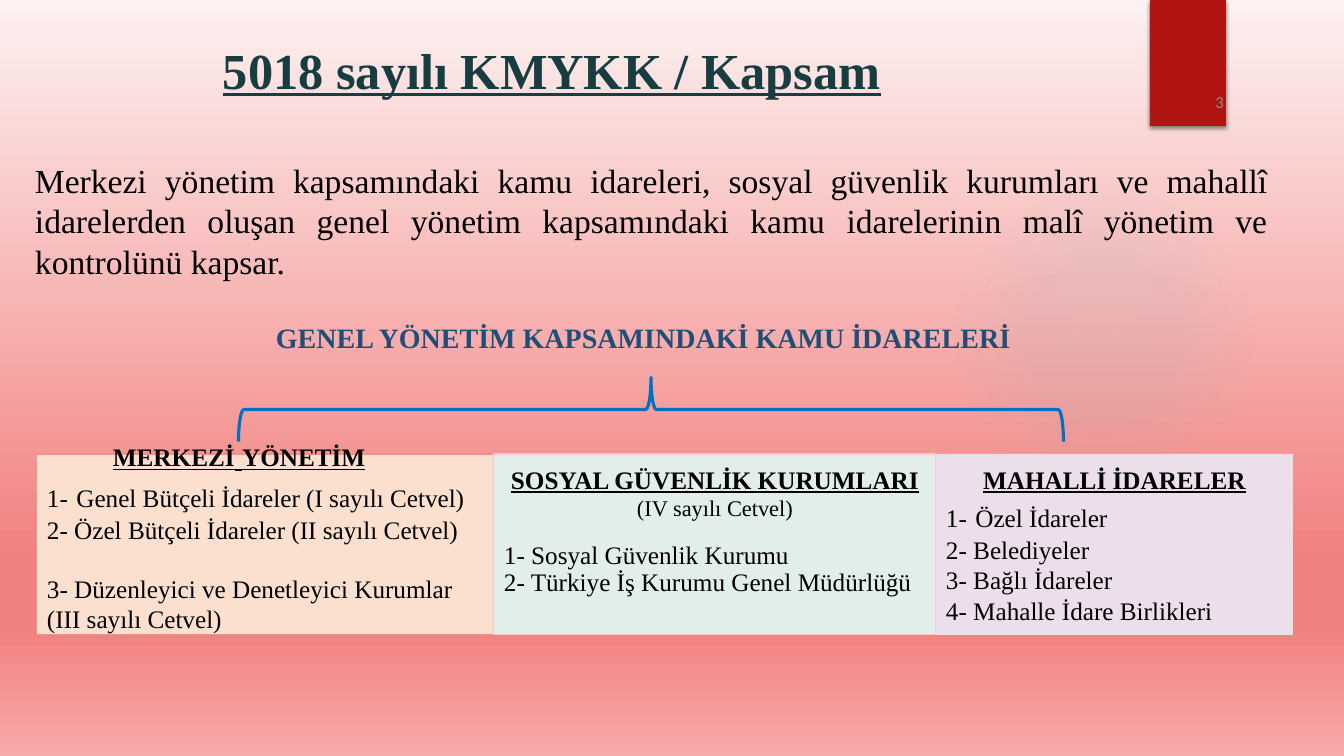
from lxml import etree
from pptx import Presentation
from pptx import util as u
from pptx.dml.color import RGBColor
from pptx.enum import shapes, text
from pptx.oxml import ns

BLACK = RGBColor(0, 0, 0)
TEAL = RGBColor(0x17, 0x3D, 0x40)
NAVY = RGBColor(0x1F, 0x4E, 0x79)
GREY = RGBColor(0x8C, 0x8C, 0x8C)
RED = RGBColor(0xB0, 0x15, 0x13)
BLUE = RGBColor(0x00, 0x70, 0xC0)
PEACH = RGBColor(0xFB, 0xE0, 0xCF)
PEACH_EDGE = RGBColor(0xF3, 0x8F, 0x8D)
MINT = RGBColor(0xE1, 0xEE, 0xE9)
MINT_EDGE = RGBColor(0xF9, 0xC7, 0xC6)
LILAC = RGBColor(0xEC, 0xDF, 0xEB)
BACKDROP = [(0, "FDF1F1", 100), (74, "F1817F", 100), (83, "F1817F", 100), (100, "F6ABAA", 100)]
GLOW = [(0, "50B9C1", 7), (36, "50B9C1", 6), (69, "50B9C1", 0)]

SERIF = "Times New Roman"
LEFT, CENTER = text.PP_ALIGN.LEFT, text.PP_ALIGN.CENTER
RIGHT, JUSTIFY = text.PP_ALIGN.RIGHT, text.PP_ALIGN.JUSTIFY
TOP, MIDDLE, BOTTOM = text.MSO_ANCHOR.TOP, text.MSO_ANCHOR.MIDDLE, text.MSO_ANCHOR.BOTTOM
HEAD = {"bold": True, "underline": True}
WIDE = {"size": 24}
TITLE = [([("5018 sayılı KMYKK / Kapsam", {"size": 36, "color": TEAL, **HEAD})], {})]
NUMBER = [([("3", {"size": 12, "name": "Calibri", "color": GREY})], {"alignment": RIGHT})]
SCOPE = [([("Merkezi yönetim kapsamındaki kamu idareleri, sosyal güvenlik kurumları ve mahallî "
            "idarelerden oluşan genel yönetim kapsamındaki kamu idarelerinin malî yönetim ve "
            "kontrolünü kapsar.", WIDE)], {"alignment": JUSTIFY})]
GROUPS = [([("GENEL YÖNETİM KAPSAMINDAKİ KAMU İDARELERİ",
             {"size": 20, "bold": True, "color": NAVY})], {})]
CENTRAL = [
    ([("\t", {}), ("MERKEZİ", HEAD), (" ", {"size": 24, "name": "Cambria", **HEAD}),
      ("YÖNETİM", HEAD), ("\t", {"size": 24, "name": "Cambria", **HEAD})], {"tabs": (66, 370)}),
    ([("1-", {}), (" ", WIDE), ("Genel Bütçeli İdareler (I sayılı Cetvel)", {})], {}),
    ([("2- Özel Bütçeli İdareler (II sayılı Cetvel)", {})], {}),
    ([("3- Düzenleyici ve Denetleyici Kurumlar (III sayılı Cetvel)", {})],
     {"space_before": u.Pt(21)}),
]
SOCIAL = [
    ([("SOSYAL GÜVENLİK KURUMLARI", HEAD)], {"alignment": CENTER}),
    ([("(IV sayılı Cetvel)", {"size": 16})], {"alignment": CENTER}),
    ([("1- Sosyal Güvenlik Kurumu", {})], {"space_before": u.Pt(13)}),
    ([("2- Türkiye İş Kurumu Genel Müdürlüğü", {})], {"line_spacing": 0.9}),
]
LOCAL = [
    ([("MAHALLİ İDARELER", HEAD)], {"alignment": CENTER}),
    ([("1-", {}), (" ", WIDE), ("Özel İdareler", {})], {}),
    ([("2- Belediyeler", {})], {}),
    ([("3- Bağlı İdareler", {})], {}),
    ([("4- Mahalle İdare Birlikleri", {})], {}),
]
PANEL_LEFT, PANEL_TOP, PANEL_HEIGHT = 37, 454, 181
PANELS = [
    (457, PEACH, PEACH_EDGE, BOTTOM, 1, CENTRAL),
    (442, MINT, MINT_EDGE, TOP, 10, SOCIAL),
    (357, LILAC, None, MIDDLE, 10, LOCAL),
]


def px(count):
    return u.Emu(round(count * 914400 / 100.8))


def add_xml(parent, tag, **attributes):
    child = etree.SubElement(parent, ns.qn(tag))
    for key, value in attributes.items():
        child.set(key, str(value))
    return child


def set_gradient(fill, stops, radial=False):
    fill.gradient()
    grad = fill._fill._gradFill
    for child in list(grad):
        grad.remove(child)
    stop_list = add_xml(grad, "a:gsLst")
    for place, color, opacity in stops:
        stop = add_xml(stop_list, "a:gs", pos=place * 1000)
        tint = add_xml(stop, "a:srgbClr", val=color)
        if opacity < 100:
            add_xml(tint, "a:alpha", val=opacity * 1000)
    if radial:
        shade = add_xml(grad, "a:path", path="circle")
        add_xml(shade, "a:fillToRect", l=50000, t=50000, r=50000, b=50000)
    else:
        add_xml(grad, "a:lin", ang=5400000, scaled=0)


def write(box, paragraphs, anchor=TOP, bottom=5):
    frame = box.text_frame
    settings = {"word_wrap": True, "auto_size": text.MSO_AUTO_SIZE.NONE,
                "vertical_anchor": anchor, "margin_left": px(10), "margin_right": px(10),
                "margin_top": px(min(10, max(bottom, 5))), "margin_bottom": px(bottom)}
    for key, value in settings.items():
        setattr(frame, key, value)
    for index, (spans, layout) in enumerate(paragraphs):
        para = frame.paragraphs[0] if index == 0 else frame.add_paragraph()
        layout = {"alignment": LEFT, **layout}
        stops = layout.pop("tabs", ())
        for key, value in layout.items():
            setattr(para, key, value)
        if stops:
            tabs = add_xml(para._p.get_or_add_pPr(), "a:tabLst")
            for stop in stops:
                add_xml(tabs, "a:tab", pos=px(stop), algn="l")
        for words, look in spans:
            span = para.add_run()
            span.text = words
            look = {"size": 18, "name": SERIF, "color": BLACK, "bold": False, **look}
            span.font.color.rgb = look.pop("color")
            span.font.size = u.Pt(look.pop("size"))
            for key, value in look.items():
                setattr(span.font, key, value)


def add_box(page, kind, place, fill=None, line=None, width=0.75):
    shape = page.shapes.add_shape(kind, *map(px, place))
    shape.shadow.inherit = False
    if fill is None:
        shape.fill.background()
    else:
        shape.fill.solid()
        shape.fill.fore_color.rgb = fill
    if line is None:
        shape.line.fill.background()
    else:
        shape.line.color.rgb = line
        shape.line.width = u.Pt(width)
    return shape


def add_label(page, place, paragraphs, anchor=TOP):
    write(page.shapes.add_textbox(*map(px, place)), paragraphs, anchor)


def main():
    deck = Presentation()
    deck.slide_width, deck.slide_height = px(1344), px(756)
    page = deck.slides.add_slide(deck.slide_layouts[5])
    set_gradient(page.background.fill, BACKDROP)
    kinds = shapes.MSO_SHAPE

    glow = add_box(page, kinds.OVAL, (949, 184, 310, 310))
    set_gradient(glow.fill, GLOW, radial=True)
    ribbon = add_box(page, kinds.RECTANGLE, (1150, 0, 76, 126), RED)
    effects = ribbon._element.spPr.find(ns.qn("a:effectLst"))
    shadow = add_xml(effects, "a:outerShdw", blurRad=38100, dist=25400, dir=5400000)
    add_xml(add_xml(shadow, "a:srgbClr", val="000000"), "a:alpha", val=45000)

    title = page.shapes.title
    for key, value in zip(("left", "top", "width", "height"), (213, 29, 1078, 80)):
        setattr(title, key, px(value))
    write(title, TITLE, MIDDLE)
    add_label(page, (1141, 32, 93, 85), NUMBER, BOTTOM)
    add_label(page, (25, 155, 1253, 132), SCOPE)

    left = PANEL_LEFT
    for width, fill, edge, anchor, bottom, paragraphs in PANELS:
        place = (left, PANEL_TOP, width, PANEL_HEIGHT)
        panel = add_box(page, kinds.RECTANGLE, place, fill, edge)
        write(panel, paragraphs, anchor, bottom)
        left += width

    brace = add_box(page, kinds.RIGHT_BRACE, (619, -3, 64, 825), line=BLUE, width=2.25)
    brace.rotation = 270
    add_label(page, (266, 315, 786, 44), GROUPS)
    deck.save("out.pptx")


if __name__ == "__main__":
    main()
